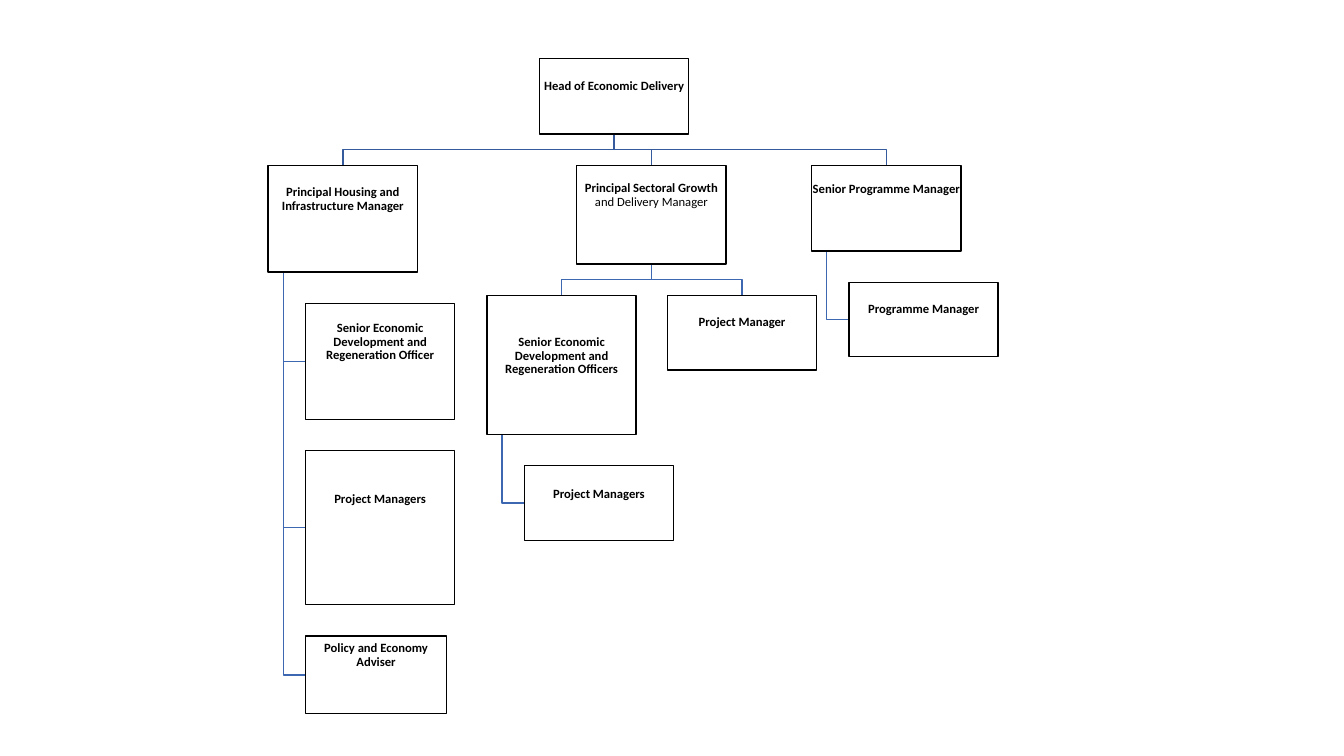
from dataclasses import dataclass, field

from pptx import Presentation
from pptx.dml.color import RGBColor
from pptx.enum import shapes, text
from pptx.util import Inches, Pt


class Theme:
    font = "Calibri"
    text_size = Pt(9)
    line_spacing = 0.9
    line_width = Pt(1)
    ink = RGBColor(0, 0, 0)
    branches = (RGBColor(0x36, 0x5B, 0x9D), RGBColor(0x3E, 0x67, 0xB2))


ROW_GAP = 0.31
HANG_INDENT = 0.37
TRUNK_INDENT = 0.15
INSET = 0.01


@dataclass
class Post:
    """A job in the chart; text_top is the space above its title, in inches."""
    title: str
    height: float
    text_top: float
    left: float = 0
    width: float = 1.48
    plain: str = ""
    hanging: bool = False
    reports: list = field(default_factory=list)
    top: float = 0

    @property
    def bottom(self):
        return self.top + self.height

    @property
    def center(self):
        return self.left + self.width / 2


def build_chart():
    housing = Post("Principal Housing and Infrastructure Manager", 1.06, 0.2, 2.66, hanging=True, reports=[
        Post("Senior Economic Development and Regeneration Officer", 1.15, 0.18),
        Post("Project Managers", 1.53, 0.42),
        Post("Policy and Economy Adviser", 0.77, 0.06, width=1.4),
    ])
    officers = Post("Senior Economic Development and Regeneration Officers", 1.38, 0.4, 4.83, hanging=True,
                    reports=[Post("Project Managers", 0.74, 0.22)])
    sectoral = Post("Principal Sectoral Growth ", 0.98, 0.16, 5.72, plain="and Delivery Manager",
                    reports=[officers, Post("Project Manager", 0.74, 0.2, 6.62)])
    programme = Post("Senior Programme Manager", 0.85, 0.17, 8.05, hanging=True,
                     reports=[Post("Programme Manager", 0.74, 0.2)])
    return Post("Head of Economic Delivery", 0.75, 0.21, 5.35, top=0.58,
                reports=[housing, sectoral, programme])


def place_reports(post):
    """Stack hanging reports under each other; set the others in one row."""
    above = post.bottom
    for report in post.reports:
        report.top = above + ROW_GAP
        if post.hanging:
            report.left = post.left + HANG_INDENT
            above = report.bottom
        place_reports(report)


def branch_points(post, report):
    if post.hanging:
        trunk = post.left + TRUNK_INDENT
        middle = report.top + report.height / 2
        return [(trunk, post.bottom), (trunk, middle), (report.left, middle)]
    bend = (post.bottom + report.top) / 2
    return [(post.center, post.bottom), (post.center, bend),
            (report.center, bend), (report.center, report.top)]


def set_outline(shape, color):
    shape.shadow.inherit = False
    shape.fill.background()
    shape.line.color.rgb = color
    shape.line.width = Theme.line_width


def draw_branches(page, post, level=0):
    for report in post.reports:
        start, *bends = [(Inches(x), Inches(y)) for x, y in branch_points(post, report)]
        builder = page.shapes.build_freeform(*start)
        builder.add_line_segments(bends, close=False)
        set_outline(builder.convert_to_shape(), Theme.branches[min(level, 1)])
        draw_branches(page, report, level + 1)


def draw_boxes(page, post):
    box = page.shapes.add_shape(shapes.MSO_SHAPE.RECTANGLE, Inches(post.left), Inches(post.top),
                                Inches(post.width), Inches(post.height))
    set_outline(box, Theme.ink)
    write_title(box.text_frame, post)
    for report in post.reports:
        draw_boxes(page, report)


def write_title(frame, post):
    frame.word_wrap = True
    frame.vertical_anchor = text.MSO_ANCHOR.TOP
    frame.margin_left = frame.margin_right = frame.margin_bottom = Inches(INSET)
    frame.margin_top = Inches(post.text_top)
    frame.text = post.title
    para = frame.paragraphs[0]
    para.alignment = text.PP_ALIGN.CENTER
    para.line_spacing = Theme.line_spacing
    if post.plain:
        para.add_run().text = post.plain
    for index, span in enumerate(para.runs):
        span.font.name = Theme.font
        span.font.size = Theme.text_size
        span.font.bold = index == 0
        span.font.color.rgb = Theme.ink


def main():
    deck = Presentation()
    deck.slide_width, deck.slide_height = Inches(13.33), Inches(7.5)
    page = deck.slides.add_slide(deck.slide_layouts[6])
    head = build_chart()
    place_reports(head)
    draw_branches(page, head)
    draw_boxes(page, head)
    deck.save("out.pptx")


if __name__ == "__main__":
    main()
